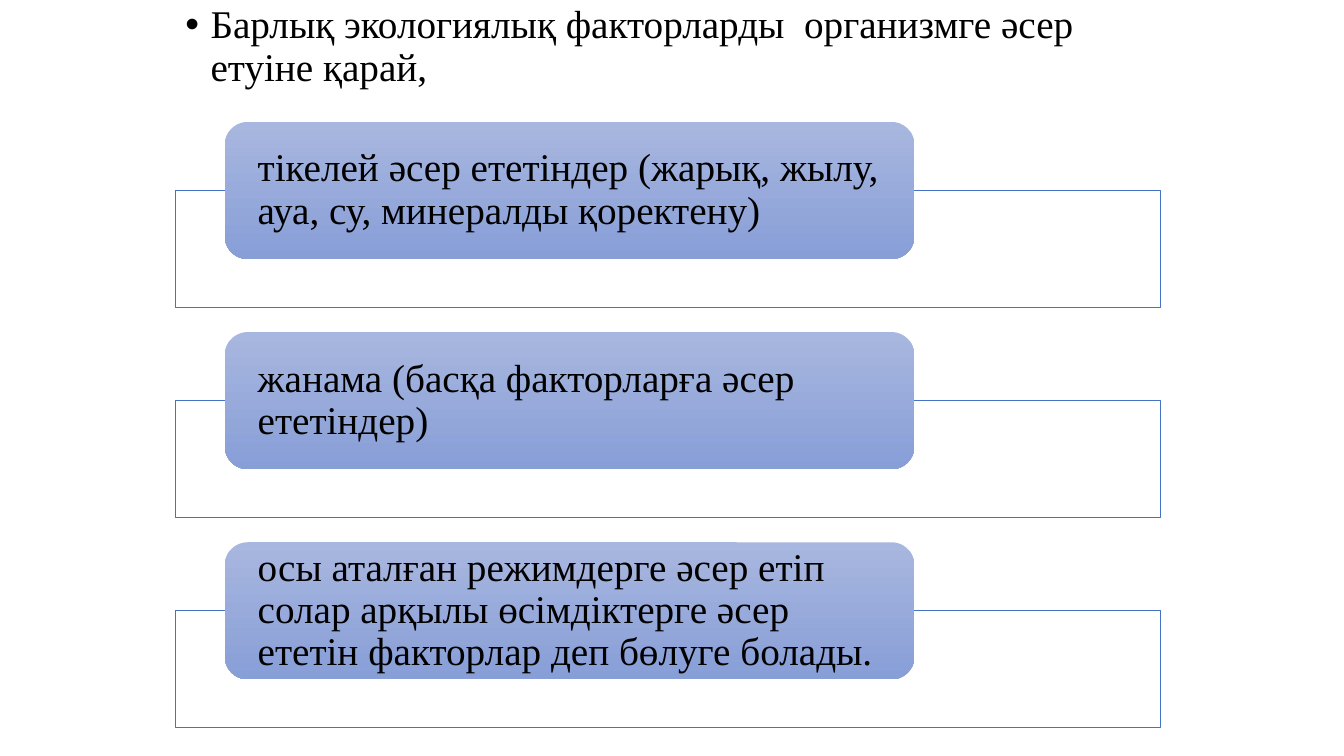
from lxml import etree
from pptx import Presentation
from pptx.dml.color import RGBColor
from pptx.enum.shapes import MSO_SHAPE as SHAPE
from pptx.enum.text import MSO_ANCHOR as ANCHOR, PP_ALIGN as ALIGN
from pptx.oxml.ns import qn
from pptx.util import Inches, Pt

BLACK = RGBColor(0x00, 0x00, 0x00)
WHITE = RGBColor(0xFF, 0xFF, 0xFF)
BLUE = RGBColor(0x44, 0x72, 0xC4)
LIGHT = RGBColor(0xA8, 0xB7, 0xDF)
DARK = RGBColor(0x88, 0x9E, 0xD7)

HEADING = "Барлық экологиялық факторларды  организмге әсер етуіне қарай,"
FACTORS = [
    "тікелей әсер ететіндер (жарық, жылу, ауа, су, минералды қоректену)",
    "жанама (басқа факторларға әсер ететіндер)",
    "осы аталған режимдерге әсер етіп солар арқылы өсімдіктерге әсер "
    "ететін факторлар деп бөлуге болады.",
]


def write(tf, text):
    tf.word_wrap = True
    tf.text = text
    p = tf.paragraphs[0]
    p.alignment = ALIGN.LEFT
    p.line_spacing = 0.9
    font = p.runs[0].font
    font.name = "Times New Roman"
    font.size = Pt(28)
    font.color.rgb = BLACK
    return p


def add_heading(slide, x, y, w, h):
    box = slide.shapes.add_textbox(Inches(x), Inches(y), Inches(w), Inches(h))
    p = write(box.text_frame, HEADING)
    pPr = p._p.get_or_add_pPr()
    pPr.set("marL", str(Inches(0.25)))
    pPr.set("indent", str(Inches(-0.25)))
    etree.SubElement(pPr, qn("a:buFont")).set("typeface", "Arial")
    etree.SubElement(pPr, qn("a:buChar")).set("char", "•")


def add_factor(slide, text, x, y, w):
    frame = slide.shapes.add_shape(
        SHAPE.RECTANGLE, Inches(x), Inches(y + 0.68), Inches(w), Inches(1.16))
    frame.shadow.inherit = False
    frame.fill.solid()
    frame.fill.fore_color.rgb = WHITE
    color = frame._element.spPr.find(qn("a:solidFill"))[0]
    etree.SubElement(color, qn("a:alpha")).set("val", "90000")
    frame.line.color.rgb = BLUE
    frame.line.width = Pt(0.5)

    label = slide.shapes.add_shape(
        SHAPE.ROUNDED_RECTANGLE, Inches(x + 0.49), Inches(y),
        Inches(w * 0.7), Inches(1.36))
    label.shadow.inherit = False
    label.fill.gradient()
    label.fill.gradient_angle = 270
    for stop, rgb, position in zip(label.fill.gradient_stops, (LIGHT, DARK), (0, 1)):
        stop.color.rgb = rgb
        stop.position = position
    label.line.fill.background()
    tf = label.text_frame
    tf.margin_left = tf.margin_right = Inches(0.26)
    tf.margin_top = tf.margin_bottom = 0
    tf.vertical_anchor = ANCHOR.MIDDLE
    write(tf, text)


def add_factor_list(slide, x, y, w, pitch):
    for i, text in enumerate(FACTORS):
        add_factor(slide, text, x, y + i * pitch, w)


def main():
    prs = Presentation()
    prs.slide_width = Inches(13.33)
    prs.slide_height = Inches(7.5)
    slide = prs.slides.add_slide(prs.slide_layouts[6])
    add_heading(slide, 1.74, 0, 9.92, 4.95)
    add_factor_list(slide, 1.74, 1.21, 9.77, 2.085)
    prs.save("out.pptx")


if __name__ == "__main__":
    main()
